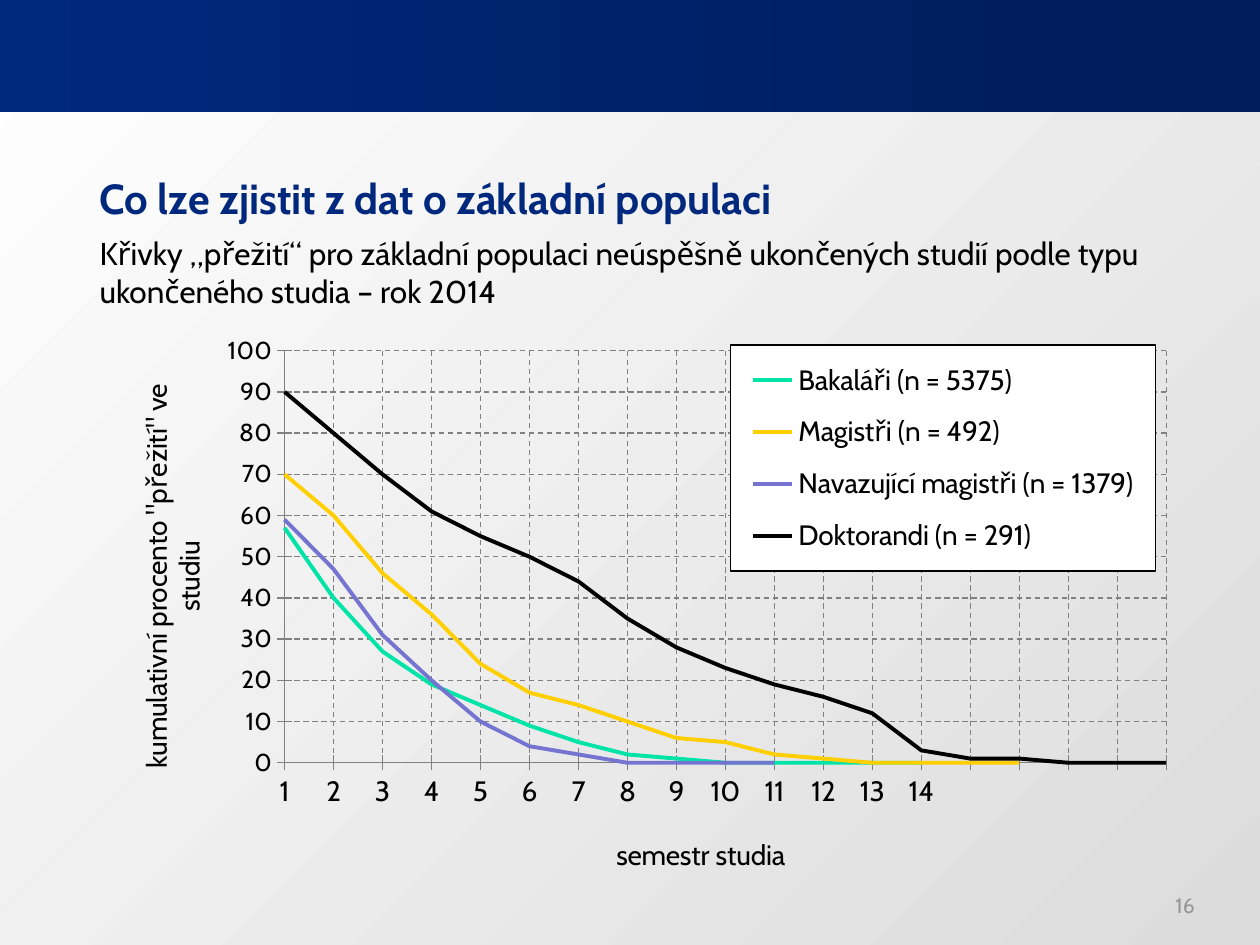
from lxml import etree
from pptx import Presentation
from pptx.chart.data import CategoryChartData
from pptx.dml.color import RGBColor
from pptx.enum import chart as kinds, dml, shapes, text
from pptx.oxml.ns import qn
from pptx.util import Pt

FONT = "Cabin"
TITLE = "Co lze zjistit z dat o základní populaci"
SUBTITLE = ("Křivky „přežití“ pro základní populaci neúspěšně ukončených studií "
            "podle typu ukončeného studia – rok 2014")
X_TITLE = "semestr studia"
Y_TITLE = 'kumulativní procento "přežití" ve studiu'
LABELLED, SEMESTERS = 14, 19  # the last semesters carry no label
SERIES = [
    ("Bakaláři (n = 5375)", "00E4A8",
     [57, 40, 27, 19, 14, 9, 5, 2, 1, 0, 0, 0, 0, 0]),
    ("Magistři (n = 492)", "FFCF01",
     [70, 60, 46, 36, 24, 17, 14, 10, 6, 5, 2, 1, 0, 0, 0, 0]),
    ("Navazující magistři (n = 1379)", "7575D1",
     [59, 47, 31, 20, 10, 4, 2, 0, 0, 0, 0]),
    ("Doktorandi (n = 291)", "000000",
     [90, 80, 70, 61, 55, 50, 44, 35, 28, 23, 19, 16, 12, 3, 1, 1, 0, 0, 0]),
]


def rgb(value):
    return RGBColor.from_string(value)


def set_font(font, size, color="000000", bold=False):
    font.name, font.size, font.bold = FONT, Pt(size), bold
    font.color.rgb = rgb(color)


def add_band(slide, height, first, last, angle):
    """Full-width rectangle with a two-colour gradient."""
    band = slide.shapes.add_shape(shapes.MSO_SHAPE.RECTANGLE, 0, 0, Pt(720), Pt(height))
    band.shadow.inherit = False
    band.line.fill.background()
    band.fill.gradient()
    band.fill.gradient_angle = angle
    for stop, color in zip(band.fill.gradient_stops, (first, last)):
        stop.color.rgb = rgb(color)


def add_text(slide, place, words, size, color, bold=False, margins=(0, 0),
             anchor=text.MSO_ANCHOR.TOP, align=text.PP_ALIGN.LEFT):
    box = slide.shapes.add_textbox(*map(Pt, place))
    frame = box.text_frame
    frame.word_wrap = True
    frame.vertical_anchor = anchor
    frame.margin_left = frame.margin_right = Pt(margins[0])
    frame.margin_top = frame.margin_bottom = Pt(margins[1])
    frame.text = words
    para = frame.paragraphs[0]
    para.alignment = align
    set_font(para.runs[0].font, size, color, bold)


def set_layout(element, index, inner=False, **fractions):
    """Place a chart part by fractions of the chart's width and height."""
    for old in element.findall(qn("c:layout")):
        element.remove(old)
    layout = etree.Element(qn("c:layout"))
    manual = etree.SubElement(layout, qn("c:manualLayout"))
    settings = {"layoutTarget": "inner"} if inner else {}
    settings.update(xMode="edge", yMode="edge", **fractions)
    for name, value in settings.items():
        etree.SubElement(manual, qn("c:" + name)).set("val", str(value))
    element.insert(index, layout)


def style_axis(axis, title, size, rotation, **place):
    axis.has_major_gridlines = True
    grid = axis.major_gridlines.format.line
    grid.color.rgb = axis.format.line.color.rgb = rgb("808080")
    grid.width = axis.format.line.width = Pt(0.75)
    grid.dash_style = dml.MSO_LINE.DASH
    axis.major_tick_mark = kinds.XL_TICK_MARK.CROSS
    axis.minor_tick_mark = kinds.XL_TICK_MARK.NONE
    set_font(axis.tick_labels.font, size)
    frame = axis.axis_title.text_frame
    frame.text = title
    set_font(frame.paragraphs[0].runs[0].font, 16)
    body = frame._txBody.find(qn("a:bodyPr"))
    body.set("rot", str(rotation * 60000))
    body.set("vert", "horz")
    set_layout(axis.axis_title._element, 1, **place)


def start_on_axis(axis):
    """Let the lines begin on the value axis itself."""
    for old in axis._element.findall(qn("c:crossBetween")):
        axis._element.remove(old)
    crossing = etree.Element(qn("c:crossBetween"), val="midCat")
    axis._element.find(qn("c:majorUnit")).addprevious(crossing)


def add_survival_chart(slide):
    data = CategoryChartData(number_format="0")
    data.categories = [str(n) if n <= LABELLED else "" for n in range(1, SEMESTERS + 1)]
    for name, _, values in SERIES:
        data.add_series(name, values + [None] * (SEMESTERS - len(values)))
    place = map(Pt, (56.9, 184.3, 622, 322.6))
    chart = slide.shapes.add_chart(kinds.XL_CHART_TYPE.LINE, *place, data).chart
    set_font(chart.font, 8)
    chart.has_title = False
    plot = chart.plots[0]
    plot.vary_by_categories = False
    for series, (_, color, _) in zip(plot.series, SERIES):
        series.smooth = False
        series.marker.style = kinds.XL_MARKER_STYLE.NONE
        series.format.line.color.rgb = rgb(color)
        series.format.line.width = Pt(2.25)

    style_axis(chart.category_axis, X_TITLE, 16, 0, x=0.47, y=0.9)
    values = chart.value_axis
    style_axis(values, Y_TITLE, 14, -90, x=0.03, y=0.1)
    values.minimum_scale, values.maximum_scale, values.major_unit = 0, 100, 10
    start_on_axis(values)
    area = chart._chartSpace.chart.plotArea
    set_layout(area, 0, inner=True, x=0.17, y=0.05, w=0.81, h=0.73)

    chart.has_legend = True
    legend = chart.legend
    legend.position = kinds.XL_LEGEND_POSITION.RIGHT
    legend.include_in_layout = True
    set_font(legend.font, 16)
    set_layout(legend._element, 1, x=0.58, y=0.04, w=0.39, h=0.4)
    look = etree.Element(qn("c:spPr"))
    outline = etree.Element(qn("a:ln"), w=str(Pt(0.75)))
    for parent, color in ((look, "FFFFFF"), (outline, "000000")):
        fill = etree.SubElement(parent, qn("a:solidFill"))
        etree.SubElement(fill, qn("a:srgbClr")).set("val", color)
    look.append(outline)
    legend._element.find(qn("c:txPr")).addprevious(look)


def main():
    deck = Presentation()
    deck.slide_width, deck.slide_height = Pt(720), Pt(540)
    slide = deck.slides.add_slide(deck.slide_layouts[6])
    add_band(slide, 540, "FFFFFF", "DCDCDC", 315)
    add_band(slide, 64, "00287D", "001C59", 0)
    add_text(slide, (56.9, 83.5, 652.3, 47.5), TITLE, 24, "00287D", bold=True,
             margins=(0, 3.6), anchor=text.MSO_ANCHOR.BOTTOM)
    add_text(slide, (540, 491.8, 149.8, 36), "16", 12, "969696", margins=(7.2, 3.6),
             anchor=text.MSO_ANCHOR.BOTTOM, align=text.PP_ALIGN.RIGHT)
    add_text(slide, (56.9, 133.9, 648.7, 48), SUBTITLE, 18, "000000")
    add_survival_chart(slide)
    deck.save("out.pptx")


if __name__ == "__main__":
    main()
